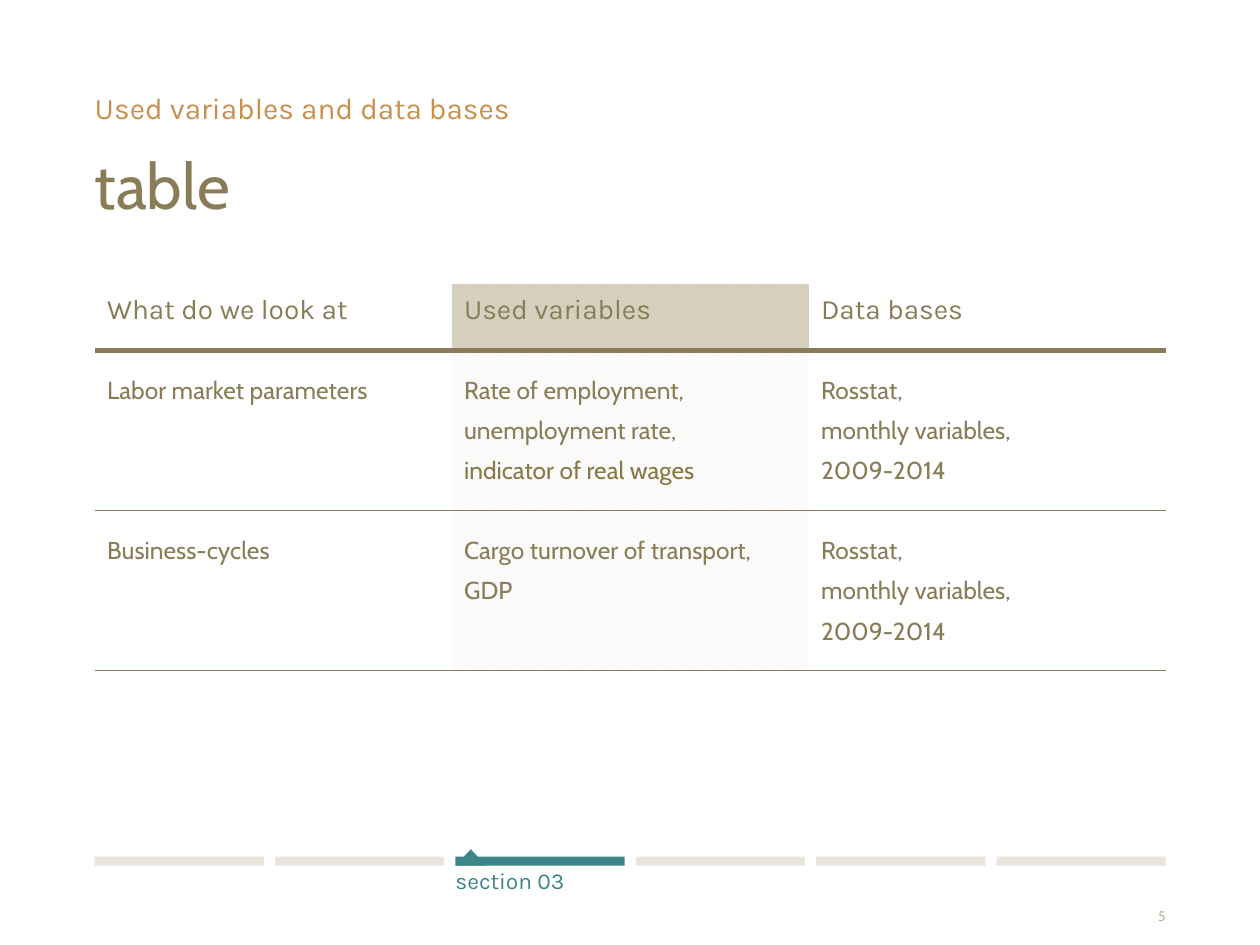
import pptx
import pptx.util
import pptx.dml.color
import pptx.enum.dml
import pptx.enum.shapes
import pptx.enum.text
import pptx.oxml
import pptx.oxml.ns

Cm = pptx.util.Cm
Pt = pptx.util.Pt

COLORS = {
    "brown": "897C57",
    "olive": "887847",
    "orange": "C8904D",
    "teal": "3C8689",
    "beige": "E9E5DC",
    "sand": "D3CCB9",
    "stone": "BCB296",
    "white": "FFFFFF",
}
HEADERS = ["What do we look at", "Used variables", "Data bases"]
SOURCE = ["Rosstat,", "monthly variables,", "2009-2014"]
ROWS = [
    [
        ["Labor market parameters"],
        ["Rate of employment,", "unemployment rate,", "indicator of real wages"],
        SOURCE,
    ],
    [["Business-cycles"], ["Cargo turnover of transport,", "GDP"], SOURCE],
]
HIGHLIGHT_COLUMN = 1
OLIVE_LINES = ["indicator of real wages"]
SECTION_COUNT = 6
ACTIVE_SECTION = 2


def rgb(name):
    return pptx.dml.color.RGBColor.from_string(COLORS[name])


def style_span(span, size, font, color):
    span.font.size = Pt(size)
    span.font.name = font
    span.font.color.rgb = rgb(color)


def add_text(page, box, text, size, font, color, line_spacing=None,
             align=pptx.enum.text.PP_ALIGN.LEFT,
             anchor=pptx.enum.text.MSO_ANCHOR.TOP):
    frame = page.shapes.add_textbox(*box).text_frame
    frame.word_wrap = True
    frame.vertical_anchor = anchor
    frame.margin_left = frame.margin_right = 0
    frame.margin_top = frame.margin_bottom = 0
    frame.text = text
    para = frame.paragraphs[0]
    para.alignment = align
    if line_spacing:
        para.line_spacing = line_spacing
    style_span(para.runs[0], size, font, color)


def paint(shape, color):
    shape.shadow.inherit = False
    shape.fill.solid()
    shape.fill.fore_color.rgb = rgb(color)
    shape.line.fill.background()


def set_borders(cell, top, bottom):
    properties = cell._tc.get_or_add_tcPr()
    for index, (side, width) in enumerate(
        [("L", 0), ("R", 0), ("T", top), ("B", bottom)]
    ):
        fill = (
            f'<a:solidFill><a:srgbClr val="{COLORS["brown"]}"/></a:solidFill>'
            if width else "<a:noFill/>"
        )
        border = pptx.oxml.parse_xml(
            f'<a:ln{side} {pptx.oxml.ns.nsdecls("a")} w="{Pt(width)}">{fill}</a:ln{side}>'
        )
        properties.insert(index, border)


def fill_cell(cell, lines, is_header, highlighted):
    cell.margin_left, cell.margin_right = Cm(0.25), Cm(0.51)
    cell.margin_top = cell.margin_bottom = Cm(0.2 if is_header else 0.51)
    cell.text_frame.text = "\n".join(lines)
    for para in cell.text_frame.paragraphs:
        color = "olive" if para.text in OLIVE_LINES else "brown"
        if is_header:
            style_span(para.runs[0], 16, "Karla", color)
        else:
            para.space_after = Pt(6)
            style_span(para.runs[0], 14, "Cabin", color)
    if highlighted:
        cell.fill.patterned()
        cell.fill.pattern = pptx.enum.dml.MSO_PATTERN.DARK_UPWARD_DIAGONAL
        cell.fill.fore_color.rgb = rgb("beige")
        cell.fill.back_color.rgb = rgb("sand" if is_header else "white")
    else:
        cell.fill.background()


def add_heading(page, left, top, width):
    add_text(page, (left, top, width, Cm(1.24)), "Used variables and data bases",
             17, "Karla", "orange", line_spacing=0.85)
    add_text(page, (left, top + Cm(1.24), width, Cm(2.54)), "table",
             36.5, "Cabin", "brown", line_spacing=0.85)


def add_variables_table(page, left, top, width):
    heights = [Cm(1.34)] + [Cm(3.23)] * len(ROWS)
    rules = [0, 3] + [1] * len(ROWS)
    table = page.shapes.add_table(
        len(heights), len(HEADERS), left, top, width, sum(heights)
    ).table
    table.first_row = False
    table.horz_banding = False
    for column in table.columns:
        column.width = width // len(HEADERS)
    content = [[[header] for header in HEADERS]] + ROWS
    for row_index, row in enumerate(content):
        table.rows[row_index].height = heights[row_index]
        for column_index, lines in enumerate(row):
            cell = table.cell(row_index, column_index)
            fill_cell(cell, lines, row_index == 0, column_index == HIGHLIGHT_COLUMN)
            set_borders(cell, rules[row_index], rules[row_index + 1])


def add_progress_bar(page, left, top, width):
    bar_width, bar_height = Cm(3.41), Cm(0.18)
    step = (width - bar_width) / (SECTION_COUNT - 1)
    rectangle = pptx.enum.shapes.MSO_SHAPE.RECTANGLE
    for index in range(SECTION_COUNT):
        if index != ACTIVE_SECTION:
            bar = page.shapes.add_shape(
                rectangle, int(left + index * step), top, bar_width, bar_height)
            paint(bar, "beige")

    active_left = int(left + ACTIVE_SECTION * step)
    marker = page.shapes.add_group_shape()
    paint(marker.shapes.add_shape(rectangle, active_left, top, bar_width, bar_height),
          "teal")
    base = top + bar_height
    builder = marker.shapes.build_freeform(active_left, base)
    builder.add_line_segments(
        [(active_left + Cm(0.31), base - Cm(0.33)), (active_left + Cm(0.62), base)])
    paint(builder.convert_to_shape(), "teal")
    add_text(page, (active_left, top + Cm(0.21), bar_width, Cm(0.56)),
             "section 03", 13, "Karla", "teal")


def add_page_number(page, right, top):
    width = Cm(0.81)
    add_text(page, (right - width, top, width, Cm(0.33)), "5", 8, "Cabin", "stone",
             align=pptx.enum.text.PP_ALIGN.RIGHT,
             anchor=pptx.enum.text.MSO_ANCHOR.BOTTOM)


def main():
    deck = pptx.Presentation()
    deck.slide_width, deck.slide_height = Cm(25.4), Cm(19.05)
    page = deck.slides.add_slide(deck.slide_layouts[6])
    left, width = Cm(1.91), Cm(21.59)
    add_heading(page, left, Cm(1.93), width)
    add_variables_table(page, left, Cm(5.72), width)
    add_progress_bar(page, left, Cm(17.27), width)
    add_page_number(page, left + width, Cm(18.31))
    deck.save("out.pptx")


if __name__ == "__main__":
    main()
